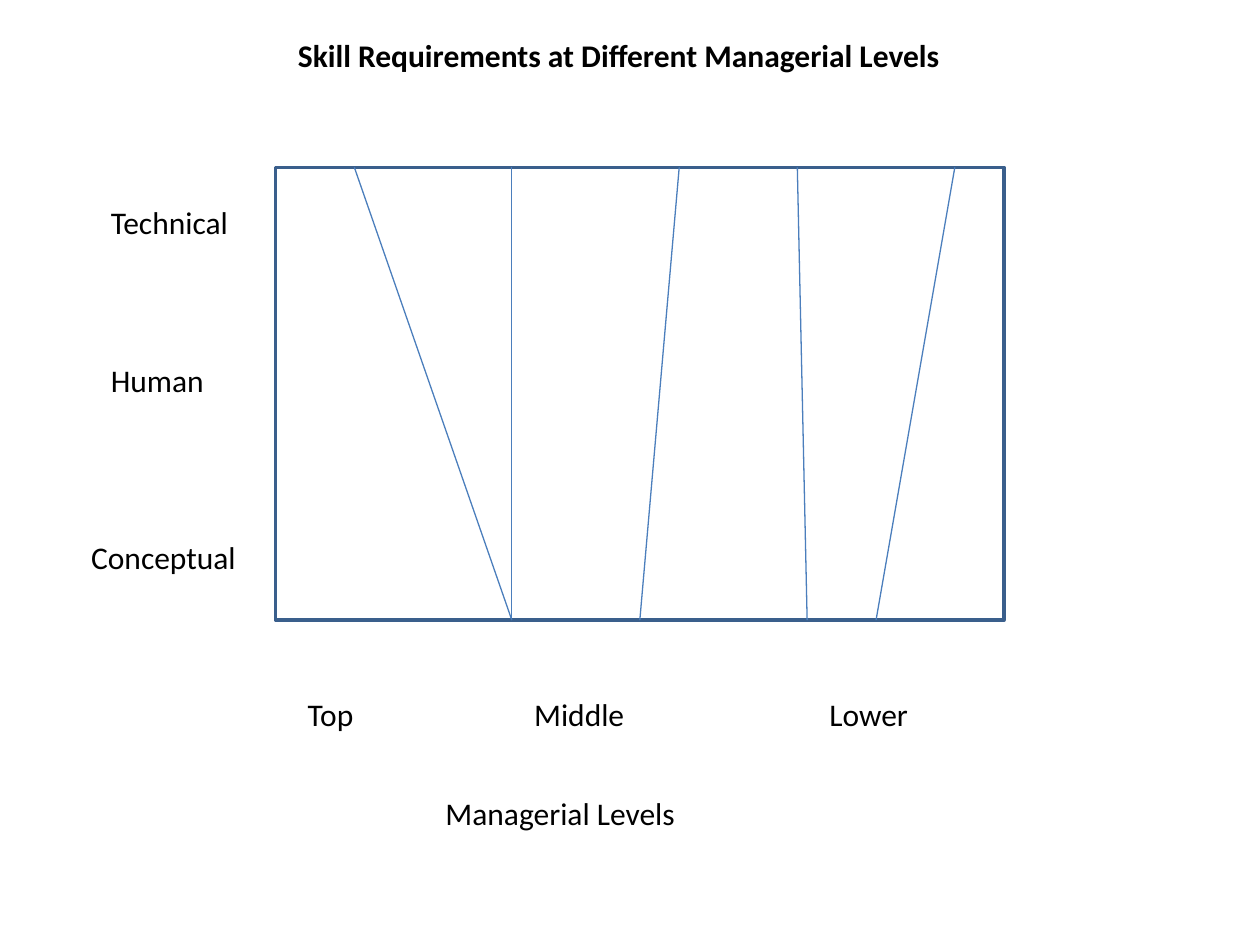
from pptx import Presentation
from pptx.dml.color import RGBColor
from pptx.enum.shapes import MSO_CONNECTOR, MSO_SHAPE
from pptx.enum.text import MSO_AUTO_SIZE
from pptx.oxml.ns import qn
from pptx.util import Inches, Pt
from lxml.etree import SubElement

COLORS = {"paper": "FFFFFF", "ink": "000000", "frame": "3A5F8C", "rule": "4B7EBC"}
WIDE, HIGH = 10, 7.5
COLS = 128  # square cells, so the slide is 96 rows high


class Board:
    """Draws on one slide; all lengths are in grid cells."""

    font, size = "Calibri", 18

    def __init__(self, deck):
        self.slide = deck.slides.add_slide(deck.slide_layouts[6])
        self.shapes = self.slide.shapes

    def cells(self, *counts):
        return [Inches(n * WIDE / COLS) for n in counts]

    def color(self, name):
        return RGBColor.from_string(COLORS[name])

    def stroke(self, line, name, width):
        line.color.rgb = self.color(name)
        line.width = Pt(width)

    def frame(self, left, top, right, base):
        box = self.shapes.add_shape(
            MSO_SHAPE.RECTANGLE, *self.cells(left, top, right - left, base - top))
        box.shadow.inherit = False
        box.fill.solid()
        box.fill.fore_color.rgb = self.color("paper")
        self.stroke(box.line, "frame", 2)

    def rule(self, *ends):
        rule = self.shapes.add_connector(MSO_CONNECTOR.STRAIGHT, *self.cells(*ends))
        self.stroke(rule.line, "rule", 0.75)
        SubElement(rule._element.spPr, qn("a:effectLst"))

    def label(self, text, col, row, width, bold=False):
        box = self.shapes.add_textbox(*self.cells(col, row, width), Inches(0.4))
        frame = box.text_frame
        frame.word_wrap = True
        frame.auto_size = MSO_AUTO_SIZE.SHAPE_TO_FIT_TEXT
        run = frame.paragraphs[0].add_run()
        run.text = text
        run.font.name, run.font.size = self.font, Pt(self.size)
        run.font.bold = bold
        run.font.color.rgb = self.color("ink")


def main():
    deck = Presentation()
    deck.slide_width, deck.slide_height = Inches(WIDE), Inches(HIGH)
    board = Board(deck)

    left, top, right, base = 28, 17, 102, 63
    board.frame(left, top, right, base)
    for high, low in [(36, 52), (52, 52), (69, 65), (81, 82), (97, 89)]:
        board.rule(high, top, low, base)

    board.label("Skill Requirements at Different Managerial Levels", 29, 3, 76, bold=True)
    for level, col, width in [("Top", 30, 13), ("Middle", 53, 16), ("Lower", 83, 19)]:
        board.label(level, col, 70, width)
    for skill, col, row, width in [
        ("Technical", 10, 20, 15),
        ("Human", 10, 36, 16),
        ("Conceptual", 8, 54, 18),
    ]:
        board.label(skill, col, row, width)
    board.label("Managerial Levels", 44, 80, 42)

    deck.save("out.pptx")


if __name__ == "__main__":
    main()
